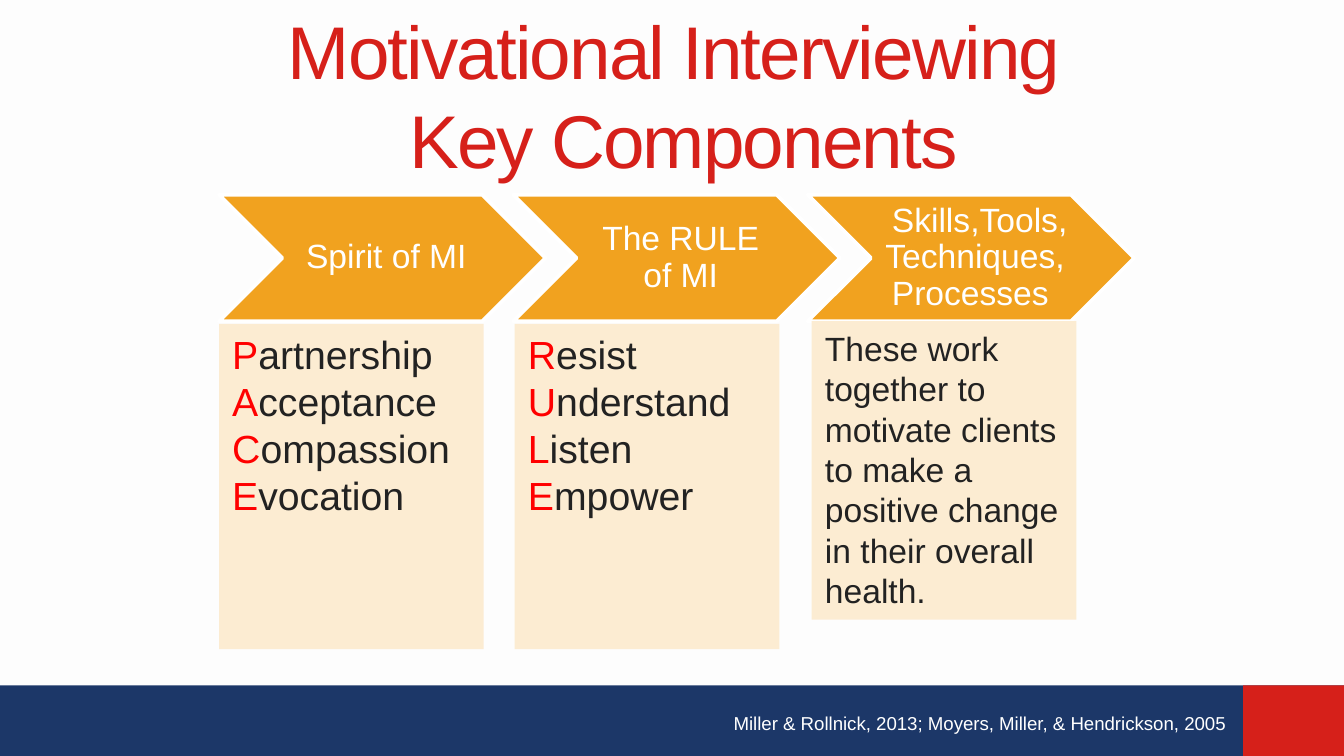
from pptx import Presentation
from pptx.dml.color import RGBColor
from pptx.enum.shapes import MSO_SHAPE
from pptx.enum.text import MSO_ANCHOR, MSO_AUTO_SIZE, PP_ALIGN
from pptx.util import Inches, Pt

NAVY = RGBColor(0x1C, 0x37, 0x68)
RED = RGBColor(0xD6, 0x20, 0x1A)
ORANGE = RGBColor(0xF1, 0xA2, 0x1F)
CREAM = RGBColor(0xFC, 0xEC, 0xD2)
BRIGHT = RGBColor(0xFF, 0x00, 0x00)
DARK = RGBColor(0x22, 0x22, 0x22)
WHITE = RGBColor(0xFF, 0xFF, 0xFF)
PAPER = RGBColor(0xFD, 0xFD, 0xFD)

STEPS = ["Spirit of MI", "The RULE of MI",
         " Skills,Tools, Techniques, Processes "]
WORDS = [["Partnership", "Acceptance", "Compassion", "Evocation"],
         ["Resist", "Understand", "Listen", "Empower"]]
RESULT = ("These work together to motivate clients to make a positive "
          "change in their overall health.")
LEFT, PITCH = 1.63, 2.19


def style(item, size, color):
    item.font.name = "Arial"
    item.font.size = Pt(size)
    item.font.color.rgb = color


def add_block(slide, kind, x, y, w, h, fill):
    block = slide.shapes.add_shape(
        kind, Inches(x), Inches(y), Inches(w), Inches(h))
    block.shadow.inherit = False
    block.fill.solid()
    block.fill.fore_color.rgb = fill
    block.line.fill.background()
    return block


def add_label(slide, x, y, w, h, text, size):
    box = slide.shapes.add_textbox(
        Inches(x), Inches(y), Inches(w), Inches(h))
    frame = box.text_frame
    frame.word_wrap = True
    frame.text = text
    style(frame.paragraphs[0].runs[0], size, WHITE)
    return frame


def add_title(slide):
    title = slide.shapes.title
    title.left, title.top = Inches(0.17), Inches(0.23)
    title.width, title.height = Inches(9.83), Inches(0.94)
    frame = title.text_frame
    frame.text = "Motivational Interviewing \vKey Components"
    frame.auto_size = MSO_AUTO_SIZE.NONE
    frame.vertical_anchor = MSO_ANCHOR.MIDDLE
    line = frame.paragraphs[0]
    line.alignment = PP_ALIGN.CENTER
    for run in line.runs:
        style(run, 40, RED)
        run.font._element.set("spc", "-100")  # tighter letters


def add_step(slide, x, text):
    arrow = add_block(slide, MSO_SHAPE.CHEVRON, x, 1.45, 2.43, 0.94, ORANGE)
    arrow.line.color.rgb = WHITE
    arrow.line.width = Pt(2)
    frame = add_label(slide, x + 0.47, 1.45, 1.5, 0.94, text, 18)
    frame.vertical_anchor = MSO_ANCHOR.MIDDLE
    frame.margin_left = Inches(0.08)
    frame.margin_top = frame.margin_right = frame.margin_bottom = Inches(0.03)
    frame.paragraphs[0].alignment = PP_ALIGN.CENTER
    frame.paragraphs[0].line_spacing = 0.9


def add_panel(slide, x, y, h, lines, size, initial):
    panel = add_block(slide, MSO_SHAPE.RECTANGLE, x, y, 1.97, h, CREAM)
    frame = panel.text_frame
    frame.word_wrap = True
    frame.vertical_anchor = MSO_ANCHOR.TOP
    for i, text in enumerate(lines):
        line = frame.paragraphs[0] if i == 0 else frame.add_paragraph()
        line.alignment = PP_ALIGN.LEFT
        # The first letter spells out the acronym
        parts = [(text[0], BRIGHT), (text[1:], DARK)] if initial else [
            (text, DARK)]
        for part, color in parts:
            run = line.add_run()
            run.text = part
            style(run, size, color)


def main():
    deck = Presentation()
    deck.slide_width = Inches(10)
    deck.slide_height = deck.slide_width * 9 // 16
    slide = deck.slides.add_slide(deck.slide_layouts[5])
    slide.background.fill.solid()
    slide.background.fill.fore_color.rgb = PAPER

    # Footer bands
    add_block(slide, MSO_SHAPE.RECTANGLE, 0, 5.1, 10, 0.53, NAVY)
    add_block(slide, MSO_SHAPE.RECTANGLE, 9.25, 5.1, 0.75, 0.53, RED)

    add_title(slide)

    # Chevron row
    for i, text in enumerate(STEPS):
        add_step(slide, LEFT + i * PITCH, text)

    # Panels under the chevrons
    add_panel(slide, 6.04, 2.39, 2.22, [RESULT], 18, False)
    for i, words in enumerate(WORDS):
        add_panel(slide, LEFT + i * 2.2, 2.41, 2.42, words, 21, True)

    # Citation
    add_label(slide, 5.36, 5.25, 3.9, 0.27,
              "Miller & Rollnick, 2013; Moyers, Miller, & Hendrickson, 2005",
              10)
    deck.save("out.pptx")


if __name__ == "__main__":
    main()
